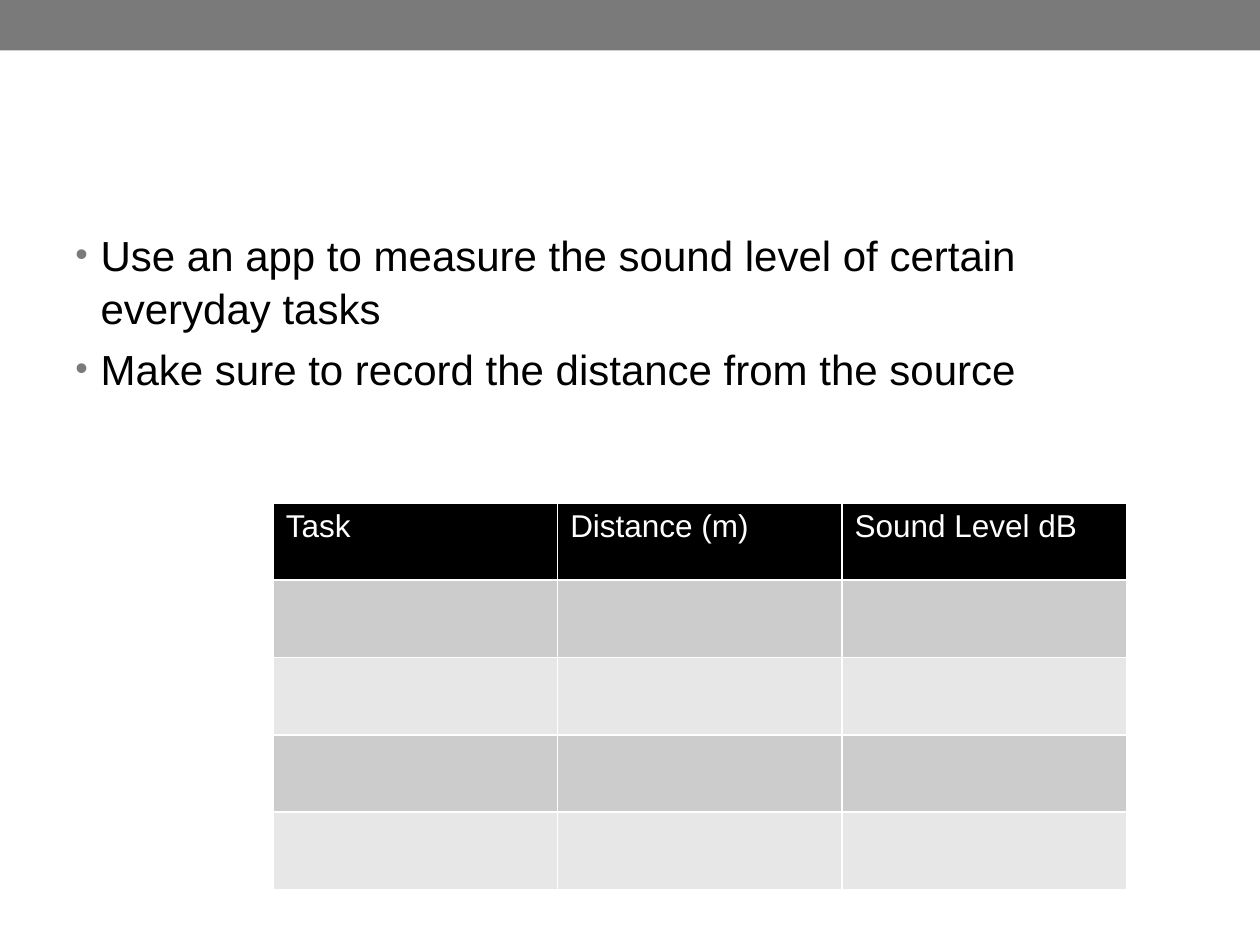
from lxml import etree
from pptx import Presentation
from pptx.dml.color import RGBColor
from pptx.enum import shapes
from pptx.oxml import ns
from pptx.util import Pt

TIPS = [
    "Use an app to measure the sound level of certain everyday tasks",
    "Make sure to record the distance from the source",
]
HEADS = ["Task", "Distance (m)", "Sound Level dB"]
ROWS = 5
COL, ROW = 162.5, 44.2

FONT = "Arial"
GRAY = RGBColor(0x7A, 0x7A, 0x7A)
BLACK = RGBColor(0, 0, 0)
WHITE = RGBColor(255, 255, 255)
DARK = RGBColor(0xCC, 0xCC, 0xCC)
LIGHT = RGBColor(0xE7, 0xE7, 0xE7)


def style(para, size, color):
    for run in para.runs:
        run.font.name = FONT
        run.font.size = Pt(size)
        run.font.color.rgb = color


def add(node, tag, **attrs):
    return etree.SubElement(node, ns.qn(tag), **attrs)


def bullet(para):
    props = para._p.get_or_add_pPr()
    props.set("marL", str(Pt(14.4)))
    props.set("indent", str(Pt(-14.4)))
    add(add(props, "a:buClr"), "a:srgbClr", val=str(GRAY))
    add(props, "a:buSzPct", val="85000")
    add(props, "a:buFont", typeface=FONT)
    add(props, "a:buChar", char="•")


def paint(cell, color):
    props = cell._tc.get_or_add_tcPr()
    for side in ("a:lnL", "a:lnR", "a:lnT", "a:lnB"):
        line = add(props, side, w=str(Pt(1)))
        add(add(line, "a:solidFill"), "a:srgbClr", val=str(WHITE))
    cell.fill.solid()
    cell.fill.fore_color.rgb = color


deck = Presentation()
deck.slide_width, deck.slide_height = Pt(720), Pt(540)
slide = deck.slides.add_slide(deck.slide_layouts[6])

band = slide.shapes.add_shape(
    shapes.MSO_SHAPE.RECTANGLE, Pt(0), Pt(0), Pt(720), Pt(28.8))
band.shadow.inherit = False
band.fill.solid()
band.fill.fore_color.rgb = GRAY
band.line.fill.background()

body = slide.shapes.add_textbox(Pt(36), Pt(126), Pt(648), Pt(384)).text_frame
body.word_wrap = True
body.text = "\n".join(TIPS)
for para in body.paragraphs:
    para.line_spacing = 1.05
    para.space_before = Pt(4.8)
    bullet(para)
    style(para, 24, BLACK)

grid = slide.shapes.add_table(
    ROWS, len(HEADS), Pt(156.2), Pt(287.3),
    Pt(COL * len(HEADS)), Pt(ROW * ROWS)).table
for col in grid.columns:
    col.width = Pt(COL)
for r, row in enumerate(grid.rows):
    row.height = Pt(ROW)
    for cell in row.cells:
        paint(cell, BLACK if r == 0 else DARK if r % 2 else LIGHT)
for cell, head in zip(grid.rows[0].cells, HEADS):
    cell.text = head
    para = cell.text_frame.paragraphs[0]
    style(para, 18, WHITE)
    para.runs[0].font.bold = False

deck.save("out.pptx")
